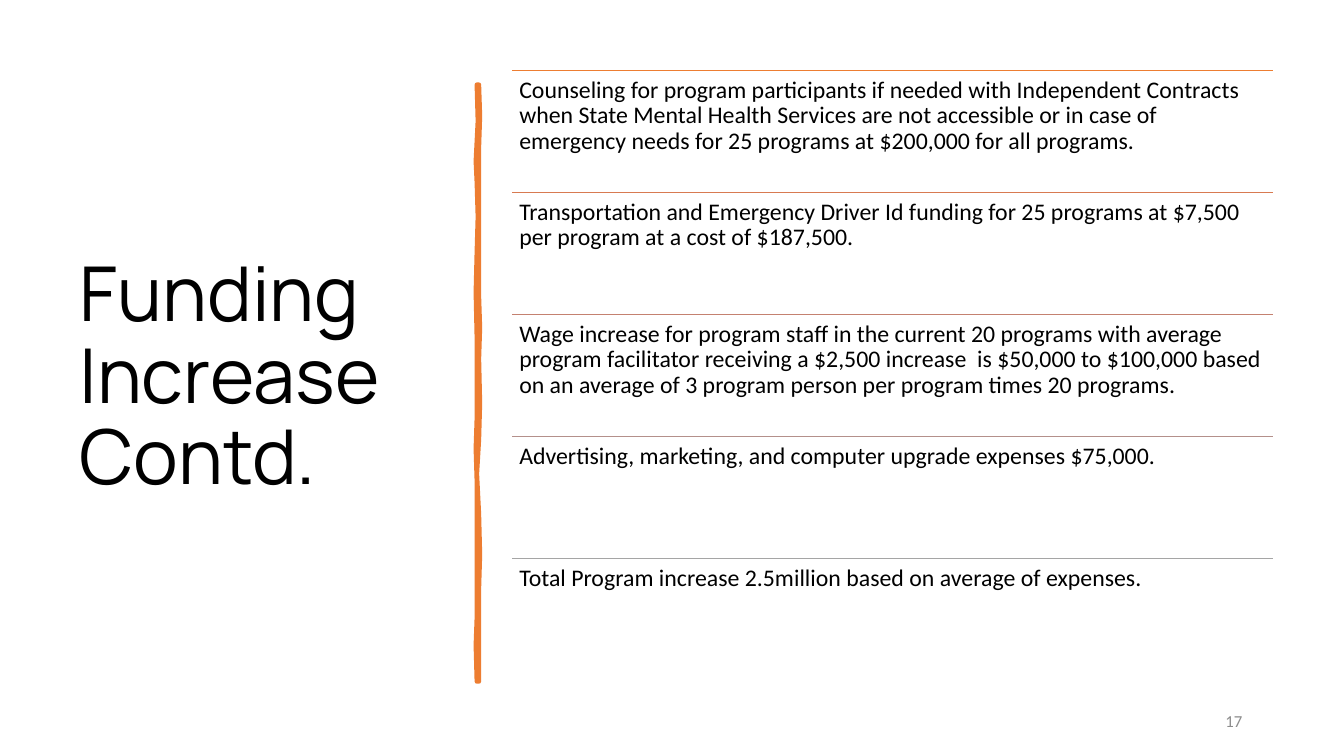
from lxml import etree
from pptx import Presentation
from pptx import util as u
from pptx.dml.color import RGBColor
from pptx.enum import shapes, text
from pptx.oxml.ns import qn

PX = 9144
COLORS = {"text": "000000", "bar": "ED7D31", "number": "8C8C8C"}
ITEMS = [
    ("ED7D31", "Counseling for program participants if needed with Independent Contracts "
               "when State Mental Health Services are not accessible or in case of "
               "emergency needs for 25 programs at $200,000 for all programs."),
    ("D87A51", "Transportation and Emergency Driver Id funding for 25 programs at $7,500 "
               "per program at a cost of $187,500."),
    ("C48170", "Wage increase for program staff in the current 20 programs with average "
               "program facilitator receiving a $2,500 increase  is $50,000 to $100,000 based "
               "on an average of 3 program person per program times 20 programs."),
    ("B4908B", "Advertising, marketing, and computer upgrade expenses $75,000."),
    ("A5A5A5", "Total Program increase 2.5million based on average of expenses."),
]
ITEM_LEFT, ITEM_TOP, ITEM_WIDTH, ITEM_HEIGHT = 508, 70, 755, 121
BAR_OUTLINE = [
    (475, 84), (476, 115), (475, 146), (475, 226), (475, 294), (476, 325),
    (475, 356), (476, 400), (475, 436), (473, 470), (475, 510), (476, 550),
    (475, 584), (475, 676), (473, 676), (472, 640), (473, 613), (473, 557),
    (473, 477), (472, 445), (473, 415), (473, 335), (472, 290), (473, 250),
    (474, 215), (473, 181), (472, 160), (474, 120), (473, 84),
]


def px(length):
    return u.Emu(length * PX)


def rgb(value):
    return RGBColor.from_string(value)


def write(frame, wording, font_name, size, color, align=text.PP_ALIGN.LEFT, spacing=None):
    frame.word_wrap = True
    frame.auto_size = text.MSO_AUTO_SIZE.NONE
    paragraph = frame.paragraphs[0]
    paragraph.text = wording
    paragraph.alignment = align
    paragraph.line_spacing = spacing
    paragraph.font.name = font_name
    paragraph.font.size = u.Pt(size)
    paragraph.font.color.rgb = rgb(color)


def add_title(slide):
    title = slide.shapes.title
    title.left, title.top, title.width, title.height = map(px, (69, 70, 374, 611))
    title.text_frame.vertical_anchor = text.MSO_ANCHOR.MIDDLE
    write(title.text_frame, "Funding Increase Contd.", "Manrope", 54, COLORS["text"], spacing=0.9)


def add_bar(slide):
    builder = slide.shapes.build_freeform(*BAR_OUTLINE[0], scale=PX)
    builder.add_line_segments(BAR_OUTLINE[1:], close=True)
    bar = builder.convert_to_shape()
    bar.shadow.inherit = False
    bar.fill.solid()
    bar.fill.fore_color.rgb = rgb(COLORS["bar"])
    bar.line.color.rgb = rgb(COLORS["bar"])
    bar.line.width = u.Pt(3.25)


def add_rule(slide, top, color):
    rule = slide.shapes.add_connector(
        shapes.MSO_CONNECTOR.STRAIGHT,
        px(ITEM_LEFT), px(top), px(ITEM_LEFT + ITEM_WIDTH), px(top))
    rule.line.color.rgb = rgb(color)
    rule.line.width = u.Pt(1)
    etree.SubElement(rule._element.spPr, qn("a:effectLst"))


def add_item(slide, top, wording):
    box = slide.shapes.add_textbox(px(ITEM_LEFT), px(top), px(ITEM_WIDTH), px(ITEM_HEIGHT))
    frame = box.text_frame
    frame.margin_left = frame.margin_top = frame.margin_right = frame.margin_bottom = px(7)
    write(frame, wording, "Calibri", 17, COLORS["text"], spacing=0.9)


def add_number(slide):
    box = slide.shapes.add_textbox(px(942), px(695), px(300), px(40))
    box.text_frame.vertical_anchor = text.MSO_ANCHOR.MIDDLE
    write(box.text_frame, "17", "Calibri", 12, COLORS["number"], text.PP_ALIGN.RIGHT)


def main():
    presentation = Presentation()
    presentation.slide_width, presentation.slide_height = px(1333), px(750)
    slide = presentation.slides.add_slide(presentation.slide_layouts[5])
    add_title(slide)
    add_bar(slide)
    for index, (color, wording) in enumerate(ITEMS):
        top = ITEM_TOP + index * ITEM_HEIGHT
        add_rule(slide, top, color)
        add_item(slide, top, wording)
    add_number(slide)
    presentation.save("out.pptx")


if __name__ == "__main__":
    main()
